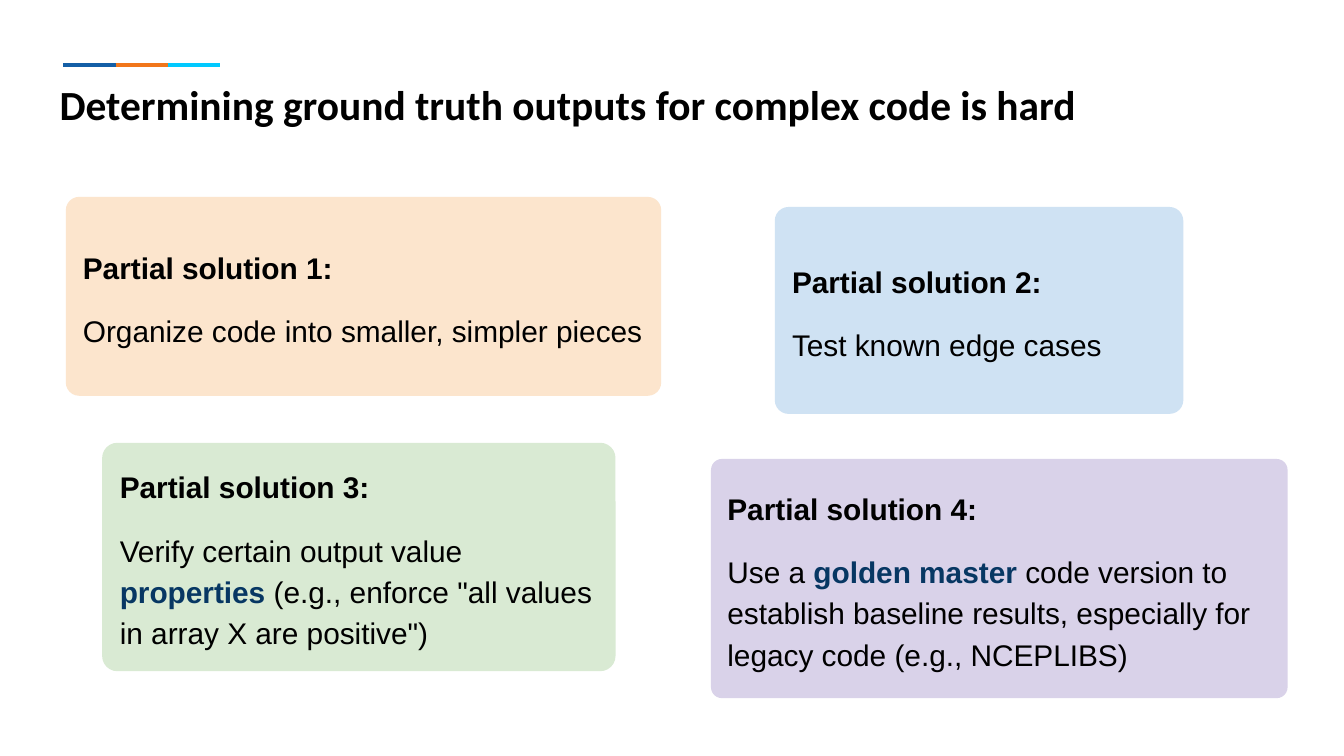
import pptx
import pptx.dml.color
import pptx.enum.shapes
import pptx.enum.text
import pptx.oxml.ns
import pptx.util
from dataclasses import dataclass
from lxml import etree

SCALE = 4572  # EMU per px, 200 px to the inch


def emu(px):
    return pptx.util.Emu(px * SCALE)


def rgb(code):
    return pptx.dml.color.RGBColor.from_string(code)


@dataclass(frozen=True)
class Theme:
    ink: str = "000000"
    accent: str = "073763"
    bars: tuple = ("145FA6", "F1761A", "00C9FF")
    peach: str = "FCE5CD"
    blue: str = "CFE2F3"
    green: str = "D9EAD3"
    violet: str = "D9D2E9"
    head_font: str = "Calibri"
    body_font: str = "Arial"
    head_size: float = 22.2
    body_size: float = 16
    bar_width: float = 2.25


class Deck:
    def __init__(self, theme):
        self.theme = theme
        self.file = pptx.Presentation()
        self.file.slide_width = emu(2000)
        self.file.slide_height = emu(1125)
        self.slide = self.file.slides.add_slide(self.file.slide_layouts[6])

    def style(self, run, face, size, color, bold):
        run.font.name = face
        run.font.size = pptx.util.Pt(size)
        run.font.bold = bold
        run.font.color.rgb = rgb(color)

    def frame(self, shape, anchor):
        frame = shape.text_frame
        frame.word_wrap = True
        frame.vertical_anchor = anchor
        frame.margin_left = frame.margin_right = emu(20)
        frame.margin_top = frame.margin_bottom = emu(20)
        return frame

    def bar(self, left, top, width, color):
        line = self.slide.shapes.add_connector(
            pptx.enum.shapes.MSO_CONNECTOR.STRAIGHT,
            emu(left), emu(top), emu(left + width), emu(top))
        line.line.color.rgb = rgb(color)
        line.line.width = pptx.util.Pt(self.theme.bar_width)
        etree.SubElement(line._element.spPr, pptx.oxml.ns.qn("a:effectLst"))

    def title(self, text, *area):
        box = self.slide.shapes.add_textbox(*map(emu, area))
        frame = self.frame(box, pptx.enum.text.MSO_ANCHOR.TOP)
        frame.text = text
        self.style(frame.paragraphs[0].runs[0], self.theme.head_font,
                   self.theme.head_size, self.theme.ink, True)

    def card(self, head, body, fill, area, round_by=0.067):
        """Draw a rounded card; words between asterisks in body are key terms."""
        theme = self.theme
        card = self.slide.shapes.add_shape(
            pptx.enum.shapes.MSO_SHAPE.ROUNDED_RECTANGLE, *map(emu, area))
        card.adjustments[0] = round_by
        card.shadow.inherit = False
        card.fill.solid()
        card.fill.fore_color.rgb = rgb(fill)
        card.line.fill.background()

        frame = self.frame(card, pptx.enum.text.MSO_ANCHOR.MIDDLE)
        frame.text = head
        first, second = frame.paragraphs[0], frame.add_paragraph()
        for para in (first, second):
            para.alignment = pptx.enum.text.PP_ALIGN.LEFT
            para.line_spacing = 1.15
        second.space_before = second.space_after = pptx.util.Pt(12)
        self.style(first.runs[0], theme.body_font, theme.body_size,
                   theme.ink, True)
        for spot, part in enumerate(body.split("*")):
            key = spot % 2 == 1
            run = second.add_run()
            run.text = part
            self.style(run, theme.body_font, theme.body_size,
                       theme.accent if key else theme.ink, key)


def main():
    theme = Theme()
    deck = Deck(theme)

    # Tricolour rule and title
    for spot, color in enumerate(theme.bars):
        deck.bar(94 + 78 * spot, 97, 78, color)
    deck.title("Determining ground truth outputs for complex code is hard",
               69, 98, 1864, 126)

    # Solution cards
    deck.card("Partial solution 1:",
              "Organize code into smaller, simpler pieces",
              theme.peach, (98, 293, 886, 296))
    deck.card("Partial solution 2:", "Test known edge cases",
              theme.blue, (1153, 308, 608, 308))
    deck.card("Partial solution 3:",
              "Verify certain output value *properties* "
              "(e.g., enforce \"all values in array X are positive\")",
              theme.green, (152, 659, 764, 340))
    deck.card("Partial solution 4:",
              "Use a *golden master* code version to establish baseline "
              "results, especially for legacy code (e.g., NCEPLIBS)",
              theme.violet, (1058, 683, 858, 356), 0.046)

    deck.file.save("out.pptx")


if __name__ == "__main__":
    main()
